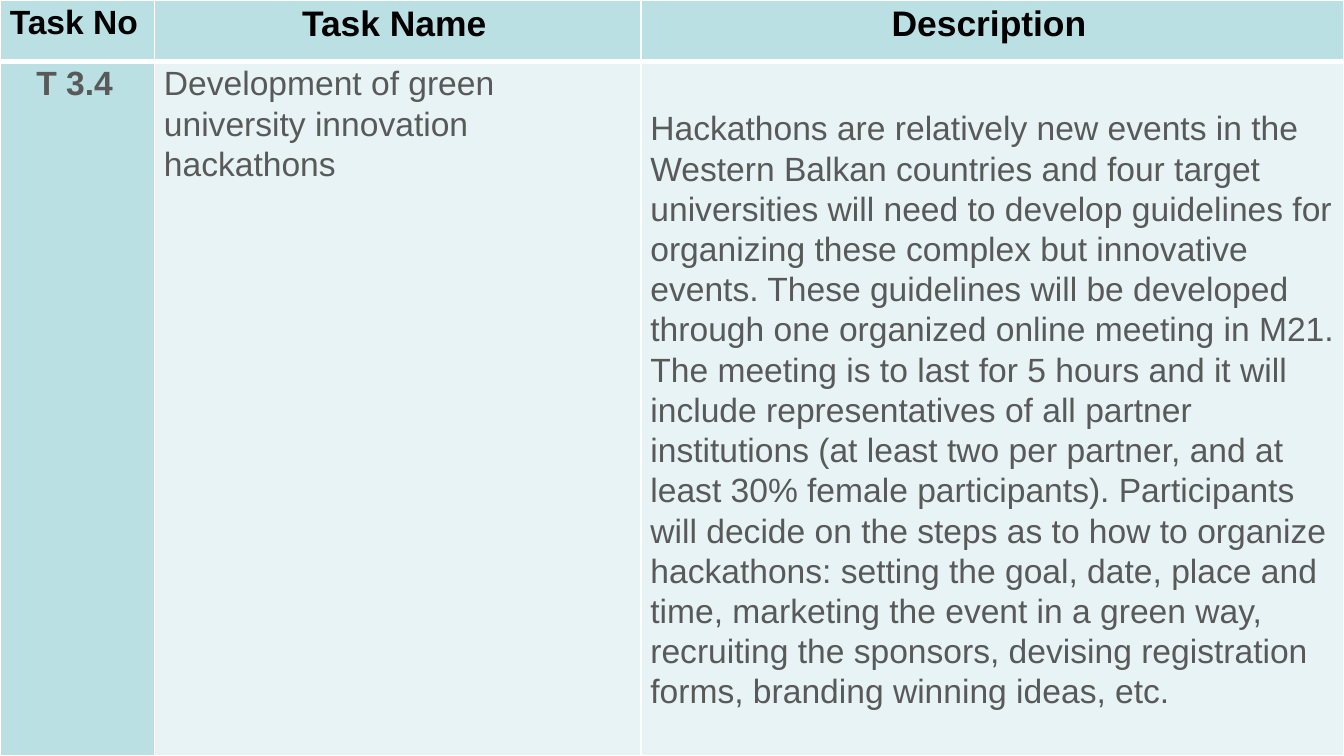
from lxml import etree
from pptx import Presentation
from pptx.dml.color import RGBColor
from pptx.enum.text import MSO_ANCHOR, PP_ALIGN
from pptx.oxml.ns import qn
from pptx.util import Pt

CENTER, LEFT = PP_ALIGN.CENTER, PP_ALIGN.LEFT
TOP, MIDDLE = MSO_ANCHOR.TOP, MSO_ANCHOR.MIDDLE

COLORS = {
    "header": "BBE0E3",
    "body": "E7F3F4",
    "border": "FFFFFF",
    "heading": "000000",
    "text": "595959",
}
COLUMN_WIDTHS = [82.8, 260.64, 376.56]
ROW_HEIGHTS = [33, 372]


def write_cell(cell, text, *, size=18, color="text", bold=False, align=LEFT,
               anchor=TOP, fill="body", left=5.04, right=2.88):
    cell.margin_left, cell.margin_right = Pt(left), Pt(right)
    cell.margin_top, cell.margin_bottom = Pt(0.72), Pt(0)
    cell.vertical_anchor = anchor
    cell.fill.solid()
    cell.fill.fore_color.rgb = RGBColor.from_string(COLORS[fill])
    paragraph = cell.text_frame.paragraphs[0]
    paragraph.alignment = align
    paragraph.line_spacing = 1.07
    paragraph.space_after = Pt(8)
    run = paragraph.add_run()
    run.text = text
    run.font.name = "Arial"
    run.font.size = Pt(size)
    run.font.bold = bold
    run.font.color.rgb = RGBColor.from_string(COLORS[color])


def set_borders(cell, **widths):
    """Line widths by side, given in the order L, R, T, B."""
    properties = cell._tc.get_or_add_tcPr()
    for position, (side, width) in enumerate(widths.items()):
        line = etree.Element(qn(f"a:ln{side}"), w=str(Pt(width)))
        solid = etree.SubElement(line, qn("a:solidFill"))
        etree.SubElement(solid, qn("a:srgbClr"), val=COLORS["border"])
        properties.insert(position, line)


presentation = Presentation()
presentation.slide_width, presentation.slide_height = Pt(720), Pt(405)
slide = presentation.slides.add_slide(presentation.slide_layouts[6])

# Task table, filling the slide
tasks = slide.shapes.add_table(2, 3, Pt(0), Pt(0), Pt(720), Pt(405)).table
tasks.horz_banding = False
for column, width in zip(tasks.columns, COLUMN_WIDTHS):
    column.width = Pt(width)
for row, height in zip(tasks.rows, ROW_HEIGHTS):
    row.height = Pt(height)

# Header row
for index, (heading, size) in enumerate(
        [("Task No ", 18), ("Task Name ", 19), ("Description ", 19)]):
    cell = tasks.cell(0, index)
    write_cell(cell, heading, size=size, color="heading", bold=True,
               align=CENTER, fill="header", left=3.6, right=2.16)
    set_borders(cell, L=1, R=1, T=1, B=3)

# Task row
write_cell(tasks.cell(1, 0), "T 3.4 ", bold=True, align=CENTER, fill="header")
write_cell(tasks.cell(1, 1),
           "Development of green university innovation hackathons")
write_cell(
    tasks.cell(1, 2),
    "Hackathons are relatively new events in the Western Balkan countries and "
    "four target universities will need to develop guidelines for organizing "
    "these complex but innovative events. These guidelines will be developed "
    "through one organized online meeting in M21. The meeting is to last for "
    "5 hours and it will include representatives of all partner institutions "
    "(at least two per partner, and at least 30% female participants). "
    "Participants will decide on the steps as to how to organize hackathons: "
    "setting the goal, date, place and time, marketing the event in a green "
    "way, recruiting the sponsors, devising registration forms, branding "
    "winning ideas, etc.",
    anchor=MIDDLE)
for cell in tasks.rows[1].cells:
    set_borders(cell, L=1, R=1, T=3, B=1)

presentation.save("out.pptx")
